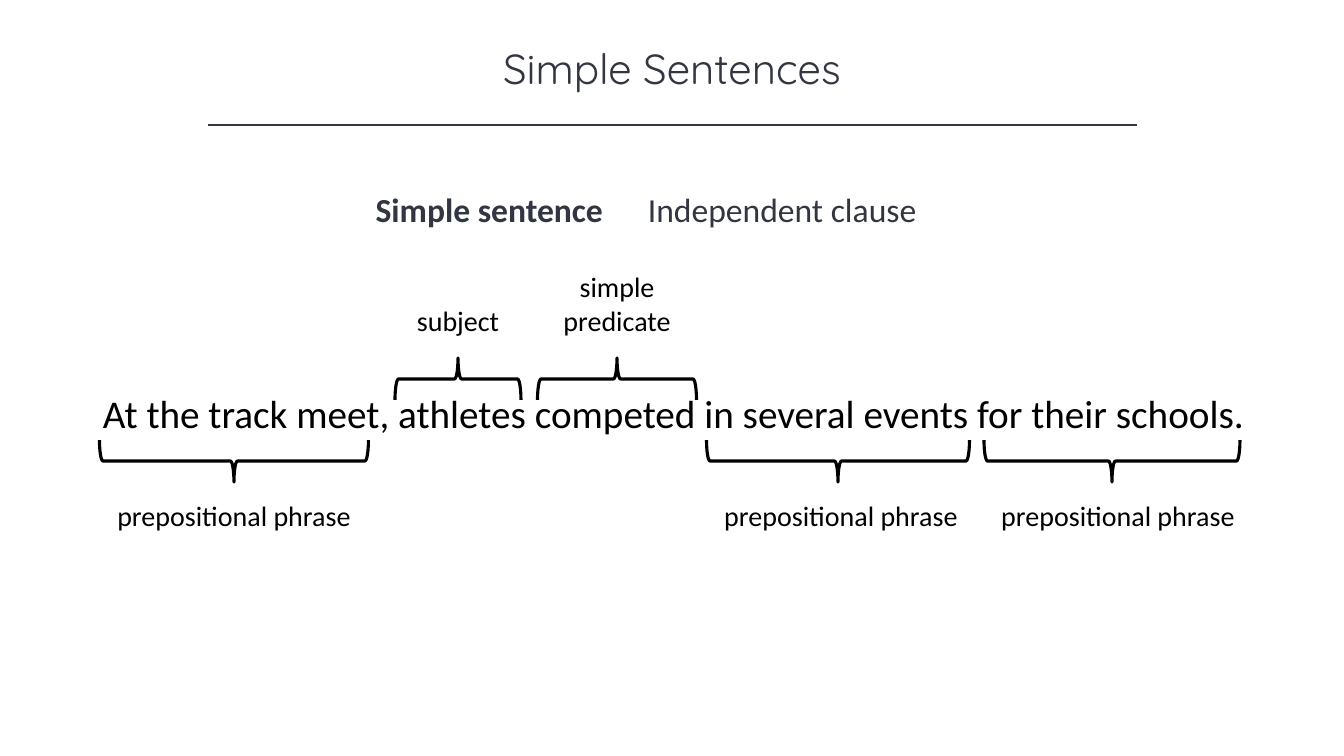
"""Build a slide that marks the parts of a simple sentence."""
from pptx import Presentation
from pptx.dml.color import RGBColor
from pptx.enum.shapes import MSO_CONNECTOR, MSO_SHAPE
from pptx.enum.text import MSO_ANCHOR, MSO_AUTO_SIZE, PP_ALIGN
from pptx.oxml.ns import qn
from pptx.util import Emu, Pt
from lxml import etree

LEFT, MID, RIGHT = PP_ALIGN.LEFT, PP_ALIGN.CENTER, PP_ALIGN.RIGHT
TOP, CENTRE = MSO_ANCHOR.TOP, MSO_ANCHOR.MIDDLE
BRACE, LINE = MSO_SHAPE.LEFT_BRACE, MSO_CONNECTOR.STRAIGHT
FIXED = MSO_AUTO_SIZE.NONE

COLORS = {"slate": "323542", "black": "000000"}
TITLE = ("Simple Sentences", (168, 37, 1008, 61))
RULE = (208, 125, 1137, 125)
TERMS = [
    ("Simple sentence", (361, 184, 252, 50), RIGHT, True),
    ("Independent clause", (638, 184, 310, 50), LEFT, False),
]
SENTENCE = (
    "At the track meet, athletes competed in several events for their schools.",
    (93, 384, 1174, 57),
)
PHRASE = "prepositional phrase"
BELOW = [(PHRASE, 234, 269, 234), (PHRASE, 838, 263, 841), (PHRASE, 1112, 256, 1118)]
ABOVE = [("subject", 458, 126, 458), ("simple predicate", 617, 159, 617)]
WIDTHS = {PHRASE: 256, "subject": 104, "simple predicate": 144}
ROWS = [(BELOW, 461, 270, 494), (ABOVE, 379, 90, 343)]
DEPTH, LABEL_H, TWO_H = 42, 44, 78


def px(n):
    return Emu(round(n * 914400 / 100.8))


def color(name):
    return RGBColor.from_string(COLORS[name])


def write(shape, text, size, hue, align=LEFT, font="Calibri", bold=False,
          anchor=TOP, wrap=True):
    frame = shape.text_frame
    frame.auto_size = FIXED
    frame.word_wrap = wrap
    frame.vertical_anchor = anchor
    frame.text = text
    para = frame.paragraphs[0]
    para.alignment = align
    para.font.name = font
    para.font.size = Pt(size)
    para.font.bold = bold
    para.font.color.rgb = color(hue)


def add_text(slide, box, *args, **style):
    write(slide.shapes.add_textbox(*map(px, box)), *args, **style)


def add_title(slide):
    text, box = TITLE
    title = slide.shapes.title
    title.left, title.top, title.width, title.height = map(px, box)
    write(title, text, 30, "slate", MID, font="Quicksand")


def add_rule(slide):
    rule = slide.shapes.add_connector(LINE, *map(px, RULE))
    rule.line.color.rgb = color("slate")
    rule.line.width = Pt(1)
    etree.SubElement(rule.element.spPr, qn("a:effectLst"))


def add_brace(slide, mid_x, mid_y, span, turn):
    box = (mid_x - DEPTH / 2, mid_y - span / 2, DEPTH, span)
    brace = slide.shapes.add_shape(BRACE, *map(px, box))
    brace.rotation = turn
    brace.shadow.inherit = False
    brace.fill.background()
    brace.line.color.rgb = color("black")
    brace.line.width = Pt(2.25)


def add_parts(slide):
    for parts, mid_y, turn, edge in ROWS:
        for text, mid_x, span, label_x in parts:
            add_brace(slide, mid_x, mid_y, span, turn)
            wide = WIDTHS[text]
            wrap = text == "simple predicate"
            high = TWO_H if wrap else LABEL_H
            top = edge if parts is BELOW else edge - high
            box = (label_x - wide / 2, top, wide, high)
            add_text(slide, box, text, 20, "black", MID, wrap=wrap)


def main():
    deck = Presentation()
    deck.slide_width, deck.slide_height = px(1344), px(756)
    slide = deck.slides.add_slide(deck.slide_layouts[5])
    add_title(slide)
    add_rule(slide)
    for text, box, align, bold in TERMS:
        add_text(slide, box, text, 24, "slate", align, bold=bold, anchor=CENTRE)
    text, box = SENTENCE
    add_text(slide, box, text, 28, "black", wrap=False)
    add_parts(slide)
    deck.save("out.pptx")


if __name__ == "__main__":
    main()
